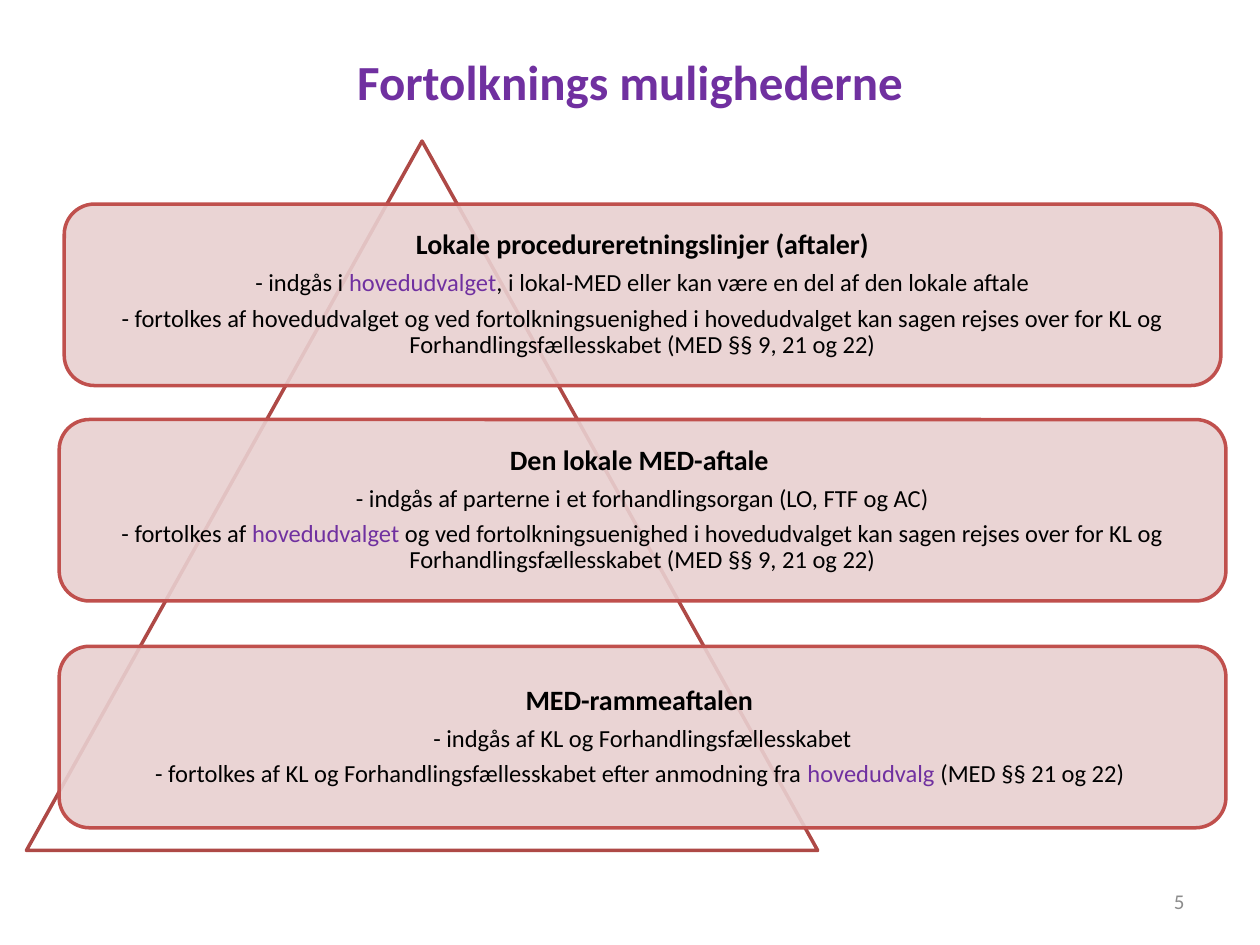
"""Build the slide on how local agreements are interpreted."""
from dataclasses import dataclass

from lxml import etree
from pptx import Presentation, util as u
from pptx.dml.color import RGBColor
from pptx.enum import shapes, text
from pptx.oxml.ns import qn

COLUMNS, ROWS = 100, 75
CELL = u.Inches(0.1)
PURPLE, BLACK, GREY = "7030A0", "000000", "8C8C8C"
PANEL, PANEL_EDGE, TRIANGLE_EDGE = "E8D0D0", "C0504D", "AE4946"
PANEL_HEIGHT = 14.4
DISPUTE = (" og ved fortolkningsuenighed i hovedudvalget kan sagen rejses over for KL og "
           "Forhandlingsfællesskabet (MED §§ 9, 21 og 22)")


@dataclass
class Area:
    """A rectangle in grid columns and rows."""
    left: float
    top: float
    width: float
    height: float

    def lengths(self) -> tuple:
        """Return the rectangle in slide units."""
        return tuple(round(value * CELL) for value in (self.left, self.top, self.width, self.height))


@dataclass
class Level:
    """One level of agreement; words between asterisks are highlighted."""
    left: float
    top: float
    heading: str
    points: tuple

    def area(self) -> Area:
        """Return the panel, centred on the shared axis."""
        return Area(self.left, self.top, 2 * (51 - self.left), PANEL_HEIGHT)


LEVELS = (
    Level(5.1, 16.2, "Lokale procedureretningslinjer (aftaler)", (
        "- indgås i *hovedudvalget*, i lokal-MED eller kan være en del af den lokale aftale",
        "- fortolkes af hovedudvalget" + DISPUTE)),
    Level(4.7, 33.3, "Den lokale MED-aftale ", (
        "- indgås af parterne i et forhandlingsorgan (LO, FTF og AC)",
        "- fortolkes af *hovedudvalget*" + DISPUTE)),
    Level(4.7, 51.3, "MED-rammeaftalen ", (
        "- indgås af KL og Forhandlingsfællesskabet",
        "- fortolkes af KL og Forhandlingsfællesskabet efter anmodning fra "
        "*hovedudvalg* (MED §§ 21 og 22) ")),
)


def colour(value: str) -> RGBColor:
    """Turn a hex string into a colour."""
    return RGBColor.from_string(value)


def apply(target, values: dict) -> None:
    """Set every named attribute on the target."""
    for name, value in values.items():
        setattr(target, name, value)


def write(para, words: str, size: float, shade: str, bold: bool = False) -> None:
    """Write words in a paragraph, with starred parts in purple."""
    for index, part in enumerate(words.split("*")):
        span = para.add_run()
        span.text = part
        apply(span.font, {"name": "Calibri", "size": u.Pt(size), "bold": bold})
        span.font.color.rgb = colour(PURPLE if index % 2 else shade)


def draw_shape(page, kind, area: Area, fill: str, edge: str, opacity: int = 100):
    """Draw an outlined preset shape."""
    shape = page.shapes.add_shape(kind, *area.lengths())
    shape.shadow.inherit = False
    shape.fill.solid()
    shape.fill.fore_color.rgb = colour(fill)
    shape.line.color.rgb = colour(edge)
    shape.line.width = u.Pt(2)
    if opacity < 100:
        tint = shape.fill._xPr.find(qn("a:solidFill"))[0]
        etree.SubElement(tint, qn("a:alpha"), val=str(opacity * 1000))
    return shape


def draw_level(page, level: Level) -> None:
    """Draw one panel with its heading and points."""
    panel = draw_shape(page, shapes.MSO_SHAPE.ROUNDED_RECTANGLE, level.area(), PANEL, PANEL_EDGE, 90)
    frame = panel.text_frame
    apply(frame, {"word_wrap": True, "vertical_anchor": text.MSO_ANCHOR.MIDDLE})
    apply(frame, {f"margin_{side}": u.Inches(0.07) for side in ("left", "top", "right", "bottom")})
    for index, words in enumerate((level.heading, *level.points)):
        size = 14 if index else 16
        para = frame.add_paragraph() if index else frame.paragraphs[0]
        apply(para, {"alignment": text.PP_ALIGN.CENTER, "line_spacing": 0.9,
                     "space_after": u.Pt(0.35 * size)})
        write(para, words, size, BLACK, bold=index == 0)


def draw_line_of_text(box, area: Area, words: str, align, size: float, shade: str, bold: bool) -> None:
    """Place a box and give it one line of text."""
    apply(box, dict(zip(("left", "top", "width", "height"), area.lengths())))
    apply(box.text_frame, {"word_wrap": True, "vertical_anchor": text.MSO_ANCHOR.MIDDLE})
    para = box.text_frame.paragraphs[0]
    para.alignment = align
    write(para, words, size, shade, bold)


def main() -> None:
    """Build and save the deck."""
    deck = Presentation()
    apply(deck, {"slide_width": COLUMNS * CELL, "slide_height": ROWS * CELL})
    page = deck.slides.add_slide(deck.slide_layouts[5])
    draw_line_of_text(page.shapes.title, Area(5, 3, 90, 6.9), "Fortolknings mulighederne",
                      text.PP_ALIGN.CENTER, 28, PURPLE, True)
    draw_shape(page, shapes.MSO_SHAPE.ISOSCELES_TRIANGLE, Area(2.1, 11.2, 62.8, 56.3),
               "FFFFFF", TRIANGLE_EDGE)
    for level in LEVELS:
        draw_level(page, level)
    number = page.shapes.add_textbox(0, 0, CELL, CELL)
    draw_line_of_text(number, Area(71.7, 69.5, 23.3, 4), "5", text.PP_ALIGN.RIGHT, 12, GREY, False)
    deck.save("out.pptx")


if __name__ == "__main__":
    main()
